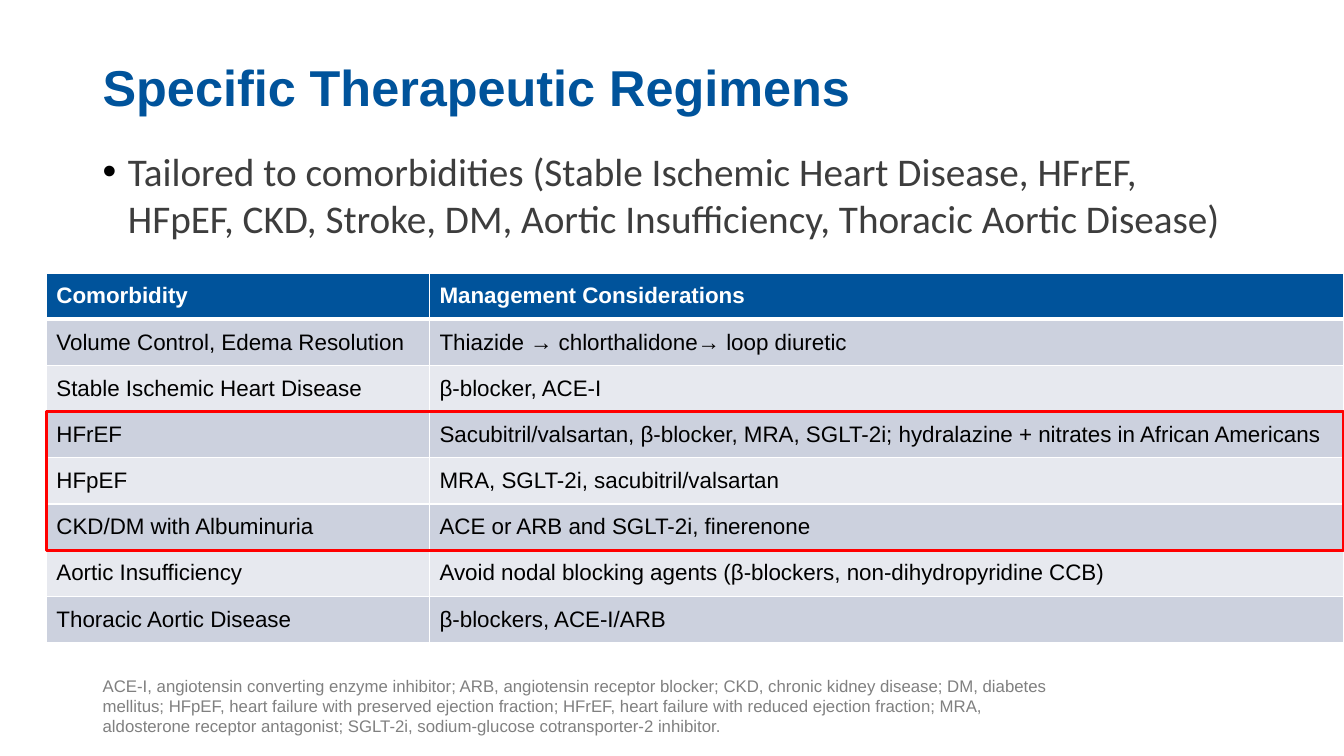
from lxml import etree
from pptx import Presentation, util as u
from pptx.dml.color import RGBColor
from pptx.enum import shapes, text
from pptx.oxml import ns

# Content
TITLE = "Specific Therapeutic Regimens"
SUMMARY = ("Tailored to comorbidities (Stable Ischemic Heart Disease, HFrEF, HFpEF, CKD, "
           "Stroke, DM, Aortic Insufficiency, Thoracic Aortic Disease)")
REGIMENS = [
    ("Comorbidity", "Management Considerations"),
    ("Volume Control, Edema Resolution", "Thiazide → chlorthalidone→ loop diuretic"),
    ("Stable Ischemic Heart Disease", "β-blocker, ACE-I"),
    ("HFrEF", "Sacubitril/valsartan, β-blocker, MRA, SGLT-2i; "
              "hydralazine + nitrates in African Americans"),
    ("HFpEF", "MRA, SGLT-2i, sacubitril/valsartan"),
    ("CKD/DM with Albuminuria", "ACE or ARB and SGLT-2i, finerenone"),
    ("Aortic Insufficiency", "Avoid nodal blocking agents (β-blockers, non-dihydropyridine CCB)"),
    ("Thoracic Aortic Disease", "β-blockers, ACE-I/ARB"),
]
HIGHLIGHTED = ("HFrEF", "HFpEF", "CKD/DM with Albuminuria")
ABBREVIATIONS = (
    "ACE-I, angiotensin converting enzyme inhibitor; ARB, angiotensin receptor blocker; "
    "CKD, chronic kidney disease; DM, diabetes mellitus; HFpEF, heart failure with preserved "
    "ejection fraction; HFrEF, heart failure with reduced ejection fraction; MRA, aldosterone "
    "receptor antagonist; SGLT-2i, sodium-glucose cotransporter-2 inhibitor.")

COLORS = {"blue": "00539B", "dark": "3D3D3D", "gray": "808080", "white": "FFFFFF",
          "black": "000000", "red": "FF0000", "odd": "CCD1DE", "even": "E7E9EF"}

# Layout in inches
WIDTH, HEIGHT = 13.33, 7.5
MARGIN, TEXT_WIDTH = 0.92, 11.5
TABLE_LEFT, TABLE_TOP, ROW = MARGIN / 2, 2.71, 0.458
COLUMNS = (3.8, WIDTH - TABLE_LEFT - 3.8)
INDENT = 0.25


def rgb(name):
    return RGBColor.from_string(COLORS[name])


def write(frame, words, size, color, font="Arial", bold=False, anchor=None,
          spacing=None, bullet=None):
    frame.word_wrap = True
    if anchor is not None:
        frame.vertical_anchor = anchor
    para = frame.paragraphs[0]
    if spacing:
        para.line_spacing = spacing
    if bullet:
        props = para._p.get_or_add_pPr()
        props.set("marL", str(u.Inches(INDENT)))
        props.set("indent", str(-u.Inches(INDENT)))
        tint = etree.SubElement(props, ns.qn("a:buClr"))
        etree.SubElement(tint, ns.qn("a:srgbClr"), val=COLORS["black"])
        etree.SubElement(props, ns.qn("a:buFont"), typeface="Arial")
        etree.SubElement(props, ns.qn("a:buChar"), char=bullet)
    run = para.add_run()
    run.text = words
    run.font.size, run.font.name, run.font.bold = u.Pt(size), font, bold
    run.font.color.rgb = rgb(color)


def add_words(slide, left, top, width, height, words, **style):
    box = slide.shapes.add_textbox(*map(u.Inches, (left, top, width, height)))
    write(box.text_frame, words, **style)


def set_borders(cell, bottom):
    props = cell._tc.get_or_add_tcPr()
    for side in "LRTB":
        points = bottom if side == "B" else 1
        edge = etree.SubElement(props, ns.qn("a:ln" + side), w=str(u.Pt(points)))
        fill = etree.SubElement(edge, ns.qn("a:solidFill"))
        etree.SubElement(fill, ns.qn("a:srgbClr"), val=COLORS["white"])


def add_regimens(slide):
    table = slide.shapes.add_table(
        len(REGIMENS), len(COLUMNS), u.Inches(TABLE_LEFT), u.Inches(TABLE_TOP),
        u.Inches(sum(COLUMNS)), u.Inches(ROW * len(REGIMENS))).table
    for column, width in zip(table.columns, COLUMNS):
        column.width = u.Inches(width)
    for r, entries in enumerate(REGIMENS):
        header = r == 0
        table.rows[r].height = u.Inches(ROW)
        for c, words in enumerate(entries):
            cell = table.cell(r, c)
            cell.vertical_anchor = text.MSO_ANCHOR.MIDDLE
            set_borders(cell, bottom=3 if header else 1)
            cell.fill.solid()
            cell.fill.fore_color.rgb = rgb("blue" if header else "odd" if r % 2 else "even")
            write(cell.text_frame, words, 16, "white" if header else "black", bold=header)


def add_highlight(slide):
    first = [entry[0] for entry in REGIMENS].index(HIGHLIGHTED[0])
    frame = slide.shapes.add_shape(
        shapes.MSO_SHAPE.RECTANGLE, u.Inches(TABLE_LEFT), u.Inches(TABLE_TOP + ROW * first),
        u.Inches(sum(COLUMNS)), u.Inches(ROW * len(HIGHLIGHTED)))
    frame.shadow.inherit = False
    frame.fill.background()
    frame.line.color.rgb = rgb("red")
    frame.line.width = u.Pt(2.25)


def main():
    deck = Presentation()
    deck.slide_width, deck.slide_height = u.Inches(WIDTH), u.Inches(HEIGHT)
    slide = deck.slides.add_slide(deck.slide_layouts[6])

    # Summary and title
    add_words(slide, MARGIN, 1.41, TEXT_WIDTH, 5.35, SUMMARY,
              size=28, color="dark", font="Calibri", bullet="•")
    add_words(slide, MARGIN, 0, TEXT_WIDTH, 1.21, TITLE, size=36, color="blue",
              bold=True, anchor=text.MSO_ANCHOR.BOTTOM, spacing=0.9)

    # Table, abbreviations and highlighted rows
    add_regimens(slide)
    add_words(slide, MARGIN, 6.95, 9.73, 0.4, ABBREVIATIONS, size=12, color="gray",
              anchor=text.MSO_ANCHOR.BOTTOM)
    add_highlight(slide)
    deck.save("out.pptx")


if __name__ == "__main__":
    main()
